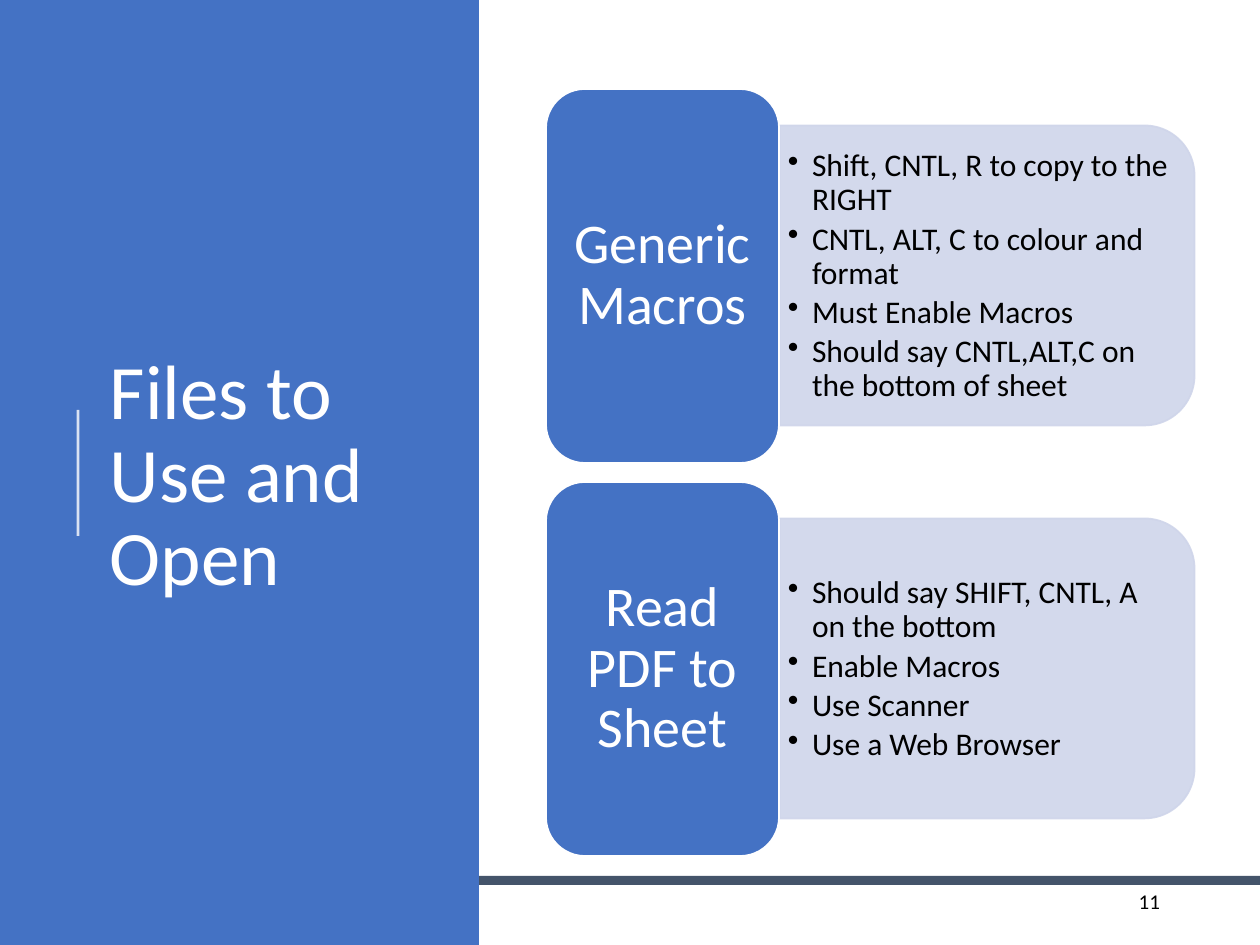
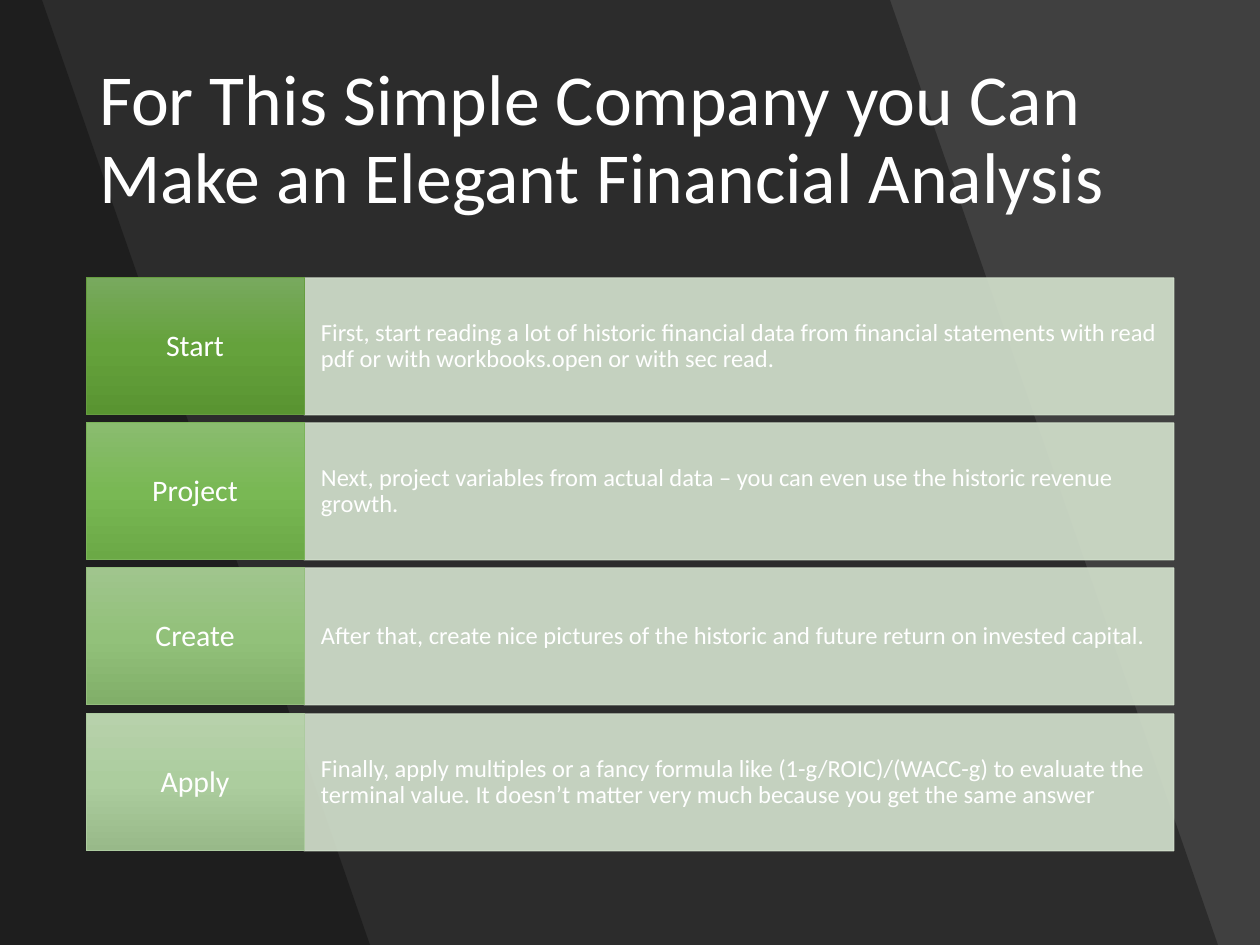
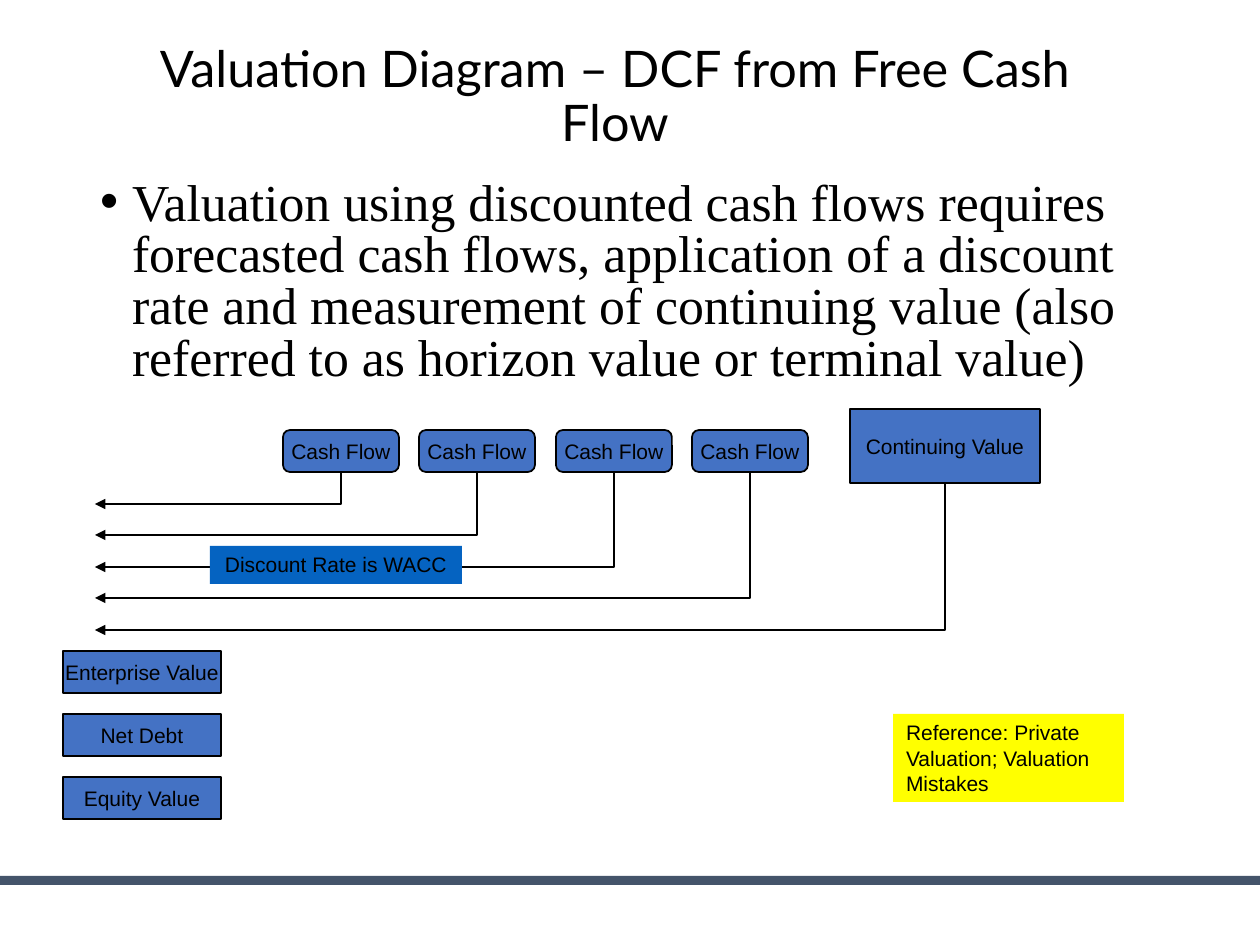
from copy import deepcopy

from lxml.etree import SubElement
from pptx import Presentation
from pptx.dml.color import RGBColor
from pptx.enum.shapes import MSO_CONNECTOR as CONN, MSO_SHAPE as SHAPE
from pptx.enum.text import MSO_ANCHOR as ANCHOR, MSO_AUTO_SIZE as FIT, PP_ALIGN as ALIGN
from pptx.oxml.ns import qn
from pptx.util import Emu, Pt

SCALE = 914400 / 126
WIDTH, HEIGHT = 1260, 945
TITLE_ONLY, TITLE_BODY = 5, 1
COLORS = {
    "white": "FFFFFF",
    "black": "000000",
    "blue": "4472C4",
    "link": "0563C1",
    "slate": "44546A",
    "pale_blue": "CFD5EA",
    "charcoal": "404040",
    "pale_green": "D5E3CF",
    "yellow": "FFFF00",
}


def px(n):
    return Emu(round(n * SCALE))


def rgb(color):
    return RGBColor.from_string(COLORS.get(color, color))


class Deck:
    font = "Calibri"
    insets = (13, 6)

    def __init__(self):
        self.prs = Presentation()
        self.prs.slide_width, self.prs.slide_height = px(WIDTH), px(HEIGHT)

    def new_slide(self, layout=TITLE_ONLY, background="white", band=True):
        self.slide = self.prs.slides.add_slide(self.prs.slide_layouts[layout])
        self.shapes = self.slide.shapes
        fill = self.slide.background.fill
        fill.solid()
        fill.fore_color.rgb = rgb(background)
        if band:
            self.shape((0, 876, WIDTH, 9), "slate")

    def paint(self, sp, fill, line=None, width=1, alpha=None):
        sp.shadow.inherit = False
        if isinstance(fill, tuple):
            self.gradient(sp, fill)
        else:
            sp.fill.solid()
            sp.fill.fore_color.rgb = rgb(fill)
        if line:
            sp.line.color.rgb = rgb(line)
            sp.line.width = Pt(width)
        else:
            sp.line.fill.background()
        if alpha:
            self.fade(sp, alpha)
        return sp

    def gradient(self, sp, colors):
        sp.fill.gradient()
        sp.fill.gradient_angle = 270
        stops = sp._element.spPr.find(".//" + qn("a:gsLst"))
        stops.insert(1, deepcopy(stops[0]))
        for stop, position, color in zip(sp.fill.gradient_stops, (0, 0.5, 1), colors):
            stop.position = position
            stop.color.rgb = rgb(color)

    def fade(self, sp, percent):
        for color in sp._element.spPr.iter(qn("a:srgbClr")):
            SubElement(color, qn("a:alpha")).set("val", str(percent * 1000))

    def shape(self, box, fill, kind=SHAPE.RECTANGLE, **style):
        sp = self.shapes.add_shape(kind, *map(px, box))
        return self.paint(sp, fill, **style)

    def polygon(self, points, fill, alpha):
        builder = self.shapes.build_freeform(*points[0], scale=SCALE)
        builder.add_line_segments(points[1:], close=True)
        self.paint(builder.convert_to_shape(), fill, alpha=alpha)

    def connector(self, kind, ends, color, width):
        cxn = self.shapes.add_connector(kind, *map(px, ends))
        cxn.line.color.rgb = rgb(color)
        cxn.line.width = Pt(width)
        SubElement(cxn._element.spPr, qn("a:effectLst"))
        return cxn

    def elbow_arrow(self, x1, y1, x2, y2):
        cx, cy = (x1 + x2) / 2, (y1 + y2) / 2
        dx, dy = (x1 - x2) / 2, (y2 - y1) / 2
        cxn = self.connector(CONN.ELBOW, (cx - dy, cy - dx, cx + dy, cy + dx), "black", 1)
        sp_pr = cxn._element.spPr
        sp_pr.find(qn("a:xfrm")).set("rot", "5400000")
        sp_pr.find(qn("a:prstGeom")).set("prst", "bentConnector2")
        SubElement(sp_pr.find(qn("a:ln")), qn("a:tailEnd")).set("type", "triangle")

    def fill_text(self, sp, lines, size, color="black", font=None, align=ALIGN.LEFT,
                  anchor=ANCHOR.MIDDLE, insets=insets, wrap=True, spacing=None,
                  after=0, bullet=0):
        tf = sp.text_frame
        tf.auto_size = FIT.NONE
        tf.word_wrap = wrap
        tf.vertical_anchor = anchor
        tf.margin_left = tf.margin_right = px(insets[0])
        tf.margin_top = tf.margin_bottom = px(insets[1])
        tf.text = "\n".join(lines)
        for p in tf.paragraphs:
            if bullet:
                p_pr = p._p.get_or_add_pPr()
                p_pr.set("marL", str(px(bullet)))
                p_pr.set("indent", str(-px(bullet)))
                SubElement(p_pr, qn("a:buChar")).set("char", "•")
            p.alignment = align
            p.space_before, p.space_after = Pt(0), Pt(after)
            if spacing:
                p.line_spacing = spacing
            p.font.name, p.font.size = font or self.font, Pt(size)
            p.font.color.rgb = rgb(color)

    def text(self, box, lines, size, **style):
        self.fill_text(self.shapes.add_textbox(*map(px, box)), lines, size, **style)

    def placeholder(self, idx, box, line, size, **style):
        sp = self.slide.placeholders[idx]
        sp.left, sp.top, sp.width, sp.height = map(px, box)
        self.shapes._spTree.append(sp._element)
        self.fill_text(sp, [line], size, **style)

    def title(self, box, line, size, **style):
        self.placeholder(0, box, line, size, spacing=0.9, **style)

    def node(self, box, label, kind=SHAPE.RECTANGLE):
        sp = self.shape(box, "blue", kind, line="black")
        self.fill_text(sp, [label], 12, font="Arial", align=ALIGN.CENTER, wrap=False)

    def note(self, box, line, fill, align=ALIGN.LEFT):
        self.fill_text(self.shape(box, fill), [line], 12, font="Arial", align=align,
                       anchor=ANCHOR.TOP)


def files_slide(deck):
    topics = [
        ("Generic Macros", [
            "Shift, CNTL, R to copy to the RIGHT",
            "CNTL, ALT, C to colour and format",
            "Must Enable Macros",
            "Should say CNTL,ALT,C on the bottom of sheet",
        ]),
        ("Read PDF to Sheet", [
            "Should say SHIFT, CNTL, A on the bottom",
            "Enable Macros",
            "Use Scanner",
            "Use a Web Browser",
        ]),
    ]
    deck.new_slide()
    deck.shape((0, 0, 479, HEIGHT), "blue")
    deck.fade(deck.connector(CONN.STRAIGHT, (78, 536, 78, 410), "white", 1.5), 80)
    for i, (topic, steps) in enumerate(topics):
        top = 89 + 393 * i
        panel = deck.shape((837, top - 21, 300, 415), "pale_blue",
                           SHAPE.ROUND_2_SAME_RECTANGLE, line="pale_blue", alpha=90)
        panel.rotation = 90
        deck.text((779, top + 52, 399, 271), steps, 18, insets=(9, 5),
                  spacing=0.9, after=3, bullet=24)
        card = deck.shape((546, top, 233, 374), "blue", SHAPE.ROUNDED_RECTANGLE, line="white")
        deck.fill_text(card, [topic], 32, color="white", align=ALIGN.CENTER,
                       insets=(16, 9), spacing=0.9)
    deck.title((97, 98, 348, 759), "Files to Use and Open", 44, color="white")
    deck.text((890, 876, 283, 50), ["11"], 12, align=ALIGN.RIGHT)


def analysis_slide(deck):
    steps = [
        ("Start", ("78A95E", "65A23C", "599431"), "669D40",
         "First, start reading a lot of historic financial data from financial statements "
         "with read pdf or with workbooks.open or with sec read."),
        ("Project", ("8ABC6F", "79B854", "6BA946"), "7BB459",
         "Next, project variables from actual data – you can even use the historic revenue "
         "growth."),
        ("Create", ("A0C58D", "92C17A", "81AF69"), "94BE7D",
         "After that, create nice pictures of the historic and future return on invested "
         "capital."),
        ("Apply", ("B7D1AB", "ACCD9E", "98B989"), "ADCBA0",
         "Finally, apply multiples or a fancy formula like (1-g/ROIC)/(WACC-g) to evaluate "
         "the terminal value. It doesn’t matter very much because you get the same answer"),
    ]
    deck.new_slide(background="charcoal", band=False)
    for top_right, bottom_right in ((890, 1218), (42, 370)):
        deck.polygon([(0, 0), (top_right, 0), (bottom_right, HEIGHT), (0, HEIGHT)],
                     "black", alpha=30)
    for i, (step, shades, edge, detail) in enumerate(steps):
        top = 278 + i * 436 // 3
        row = deck.shape((304, top, 870, 137), "pale_green", line="pale_green",
                         width=0.5, alpha=90)
        deck.fill_text(row, [detail], 14, color="white", insets=(17, 35), spacing=0.9)
        label = deck.shape((86, top, 218, 137), shades, line=edge, width=0.5)
        deck.fill_text(label, [step], 17, color="white", align=ALIGN.CENTER,
                       insets=(11, 14), spacing=0.9)
    deck.title((86, 50, 1087, 183),
               "For This Simple Company you Can Make an Elegant Financial Analysis",
               41, color="white")


def valuation_slide(deck):
    deck.new_slide(TITLE_BODY)
    deck.title((87, 50, 1056, 96), "Valuation Diagram – DCF from Free Cash Flow", 28.8,
               font="Lato", align=ALIGN.CENTER, wrap=False)
    deck.placeholder(1, (87, 174, 1072, 214),
                     "Valuation using discounted cash flows requires forecasted cash flows, "
                     "application of a discount rate and measurement of continuing value "
                     "(also referred to as horizon value or terminal value)",
                     29.6, font="Times New Roman", anchor=ANCHOR.TOP, spacing=0.83, bullet=32)
    flows = [((283 + i * 273 // 2, 430, 116, 42), "Cash Flow", SHAPE.ROUNDED_RECTANGLE)
             for i in range(4)]
    flows.append(((850, 409, 190, 74), "Continuing Value", SHAPE.RECTANGLE))
    for i, (box, label, kind) in enumerate(flows):
        left, top, width, height = box
        deck.node(box, label, kind)
        deck.elbow_arrow(left + width // 2, top + height, 95, 504 + i * 63 // 2)
    deck.note((210, 546, 252, 38), "Discount Rate is WACC", "link", ALIGN.CENTER)
    for i, label in enumerate(("Enterprise Value", "Net Debt", "Equity Value")):
        deck.node((63, 651 + 63 * i, 158, 42), label)
    deck.note((893, 714, 231, 88), "Reference: Private Valuation; Valuation Mistakes", "yellow")


def main():
    deck = Deck()
    files_slide(deck)
    analysis_slide(deck)
    valuation_slide(deck)
    deck.prs.save("out.pptx")


if __name__ == "__main__":
    main()
